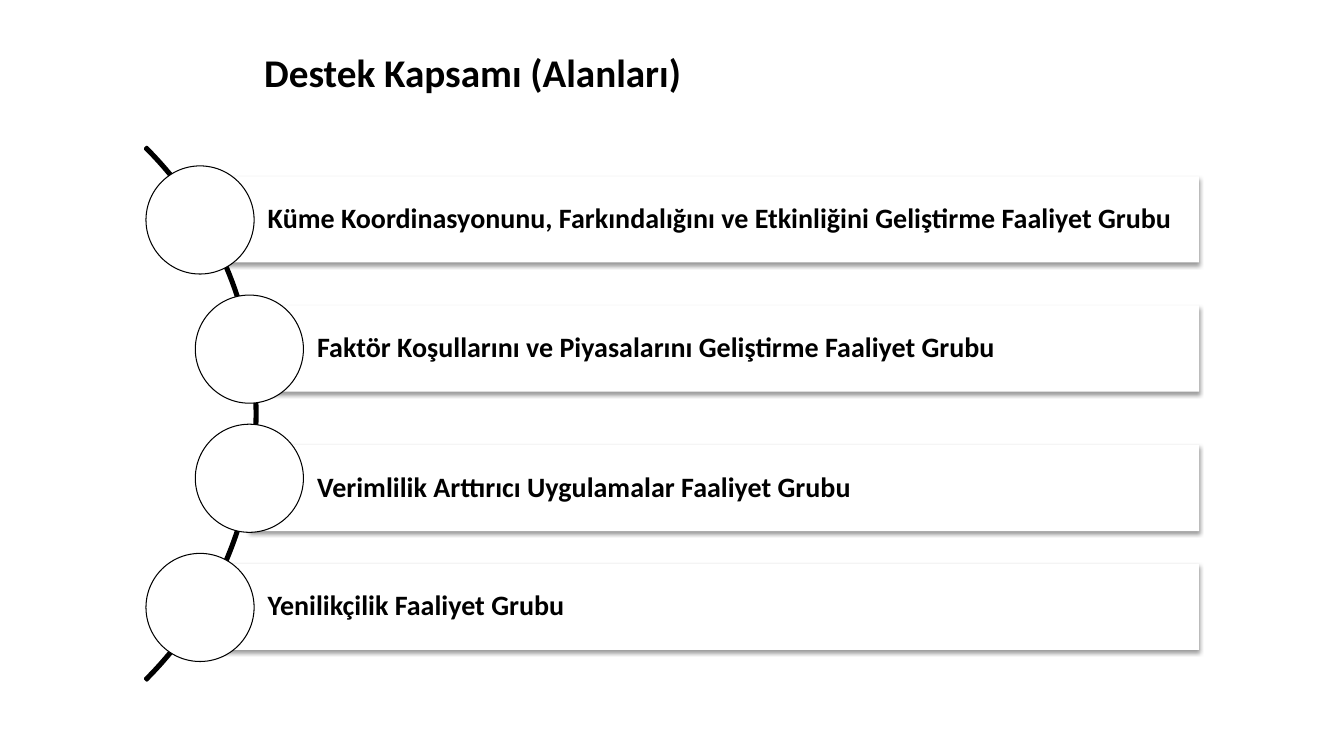
from dataclasses import dataclass

from lxml import etree
from pptx import Presentation
from pptx.dml.color import RGBColor
from pptx.enum.shapes import MSO_SHAPE as Shape
from pptx.enum.text import MSO_ANCHOR as Anchor, MSO_AUTO_SIZE as Fit, PP_ALIGN as Align
from pptx.oxml import parse_xml
from pptx.oxml.ns import nsdecls
from pptx.util import Pt

PX = 9525  # EMU in one px, 96 px to the inch


@dataclass(frozen=True)
class Theme:
    font: str = "Calibri"
    ink: RGBColor = RGBColor(0, 0, 0)
    paper: RGBColor = RGBColor(255, 255, 255)
    head: Pt = Pt(28)
    body: Pt = Pt(20)
    arc: Pt = Pt(2)
    ring: Pt = Pt(0.75)


theme = Theme()
SHADOW = f"""<a:outerShdw {nsdecls("a")} blurRad="40000" dist="20000" dir="5400000"
 rotWithShape="0"><a:srgbClr val="{theme.ink}"><a:alpha val="38000"/></a:srgbClr></a:outerShdw>"""


def add(kind, x, y, wide, high, line=None):
    """Add a paper-filled shape, outlined only if a line width is given."""
    shape = slide.shapes.add_shape(kind, x * PX, y * PX, wide * PX, high * PX)
    shape.shadow.inherit = False
    shape.fill.solid()
    shape.fill.fore_color.rgb = theme.paper
    if line is None:
        shape.line.fill.background()
    else:
        shape.line.color.rgb = theme.ink
        shape.line.width = line
    return shape


def write(frame, text, size):
    frame.text = text
    frame.word_wrap = True
    frame.vertical_anchor = Anchor.MIDDLE
    para = frame.paragraphs[0]
    para.alignment = Align.LEFT
    font = para.font
    font.name, font.size, font.bold = theme.font, size, True
    font.color.rgb = theme.ink
    return para


deck = Presentation()
deck.slide_width, deck.slide_height = 1280 * PX, 720 * PX
slide = deck.slides.add_slide(deck.slide_layouts[5])

title = slide.shapes.title
title.left, title.top, title.width, title.height = 242 * PX, 41 * PX, 932 * PX, 55 * PX
write(title.text_frame, "Destek Kapsamı (Alanları)", theme.head)
title.text_frame.auto_size = Fit.NONE

arc = add(Shape.BLOCK_ARC, -473, 35, 718, 718, theme.arc)
arc.fill.background()
for i, value in enumerate((189, 27, 0.003)):
    arc.adjustments[i] = value

# Text, left edge of the bar, extra drop of the bar
groups = (
    ("Küme Koordinasyonunu, Farkındalığını ve Etkinliğini Geliştirme Faaliyet Grubu", 190, 0),
    ("Faktör Koşullarını ve Piyasalarını Geliştirme Faaliyet Grubu", 237, 0),
    ("Verimlilik Arttırıcı Uygulamalar Faaliyet Grubu", 237, 10),
    ("Yenilikçilik Faaliyet Grubu", 190, 0),
)
TOP, STEP, RIGHT, HIGH, DISC = 158, 123, 1142, 82, 103

for i, (text, left, drop) in enumerate(groups):
    y = TOP + i * STEP
    bar = add(Shape.RECTANGLE, left, y + 10 + drop, RIGHT - left, HIGH)
    bar._element.spPr.find("a:effectLst", {"a": SHADOW.split('"')[1]}).append(parse_xml(SHADOW))
    frame = bar.text_frame
    frame.margin_left = 65 * PX
    frame.margin_right = frame.margin_top = frame.margin_bottom = 5 * PX
    write(frame, text, theme.body).line_spacing = 0.9
    add(Shape.OVAL, left - 51, y, DISC, DISC, theme.ring)

deck.save("out.pptx")
